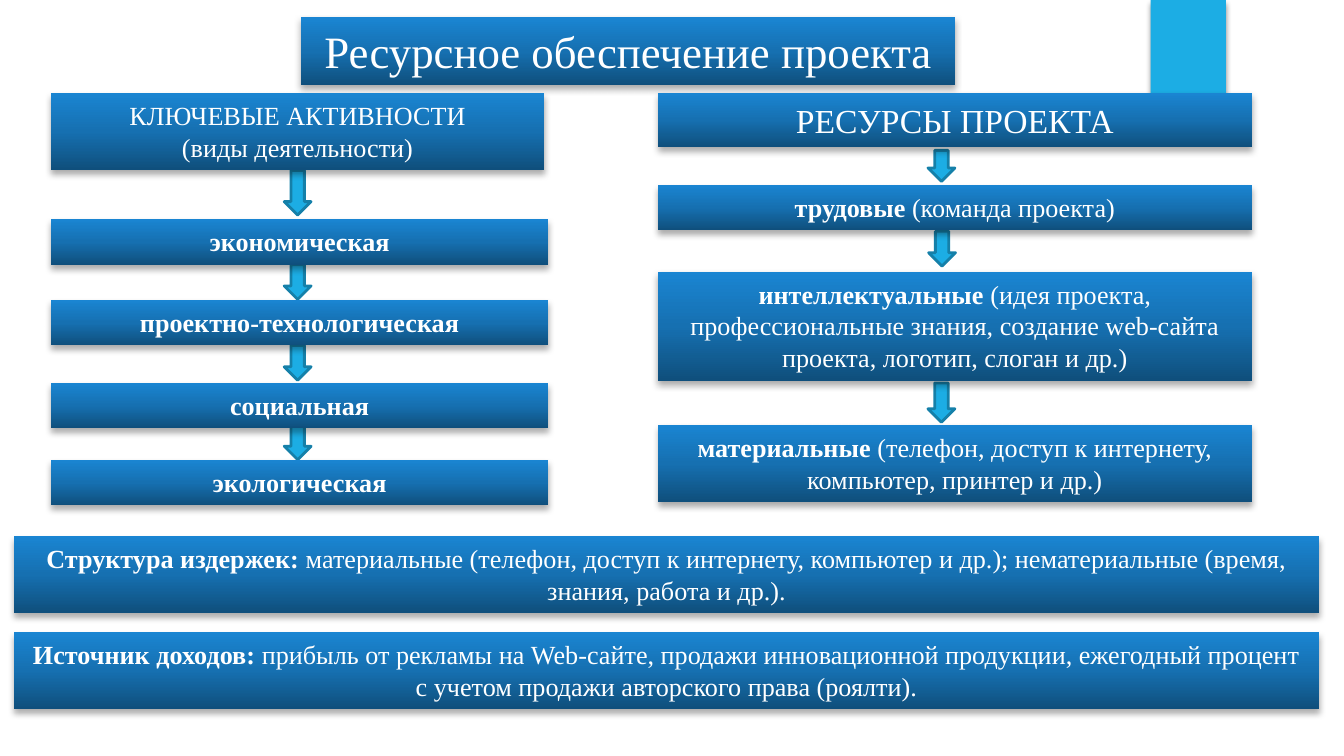
from copy import deepcopy

from lxml import etree
from pptx import Presentation
from pptx.dml.color import RGBColor
from pptx.enum.shapes import MSO_SHAPE
from pptx.enum.text import MSO_ANCHOR, PP_ALIGN
from pptx.oxml.ns import qn
from pptx.util import Inches, Pt

RECTANGLE, DOWN_ARROW = MSO_SHAPE.RECTANGLE, MSO_SHAPE.DOWN_ARROW
TOP, CENTER = MSO_ANCHOR.TOP, PP_ALIGN.CENTER

# Widescreen slide, 16 to 9
deck = Presentation()
deck.slide_width = Inches(10)
deck.slide_height = deck.slide_width * 9 // 16
page = deck.slides.add_slide(deck.slide_layouts[5])

# Grid of 100 columns by 100 rows
COLUMN, ROW = deck.slide_width / 100, deck.slide_height / 100
LEFT, LEFT_WIDTH = 3.8, 37
RIGHT, RIGHT_WIDTH = 48.95, 44.2
WIDE, WIDE_WIDTH = 1.05, 97.1
ONE_LINE, TWO_LINES, THREE_LINES = 6, 10.17, 14.4


def color(value):
    return RGBColor.from_string(value)


def place(shape, column, row, columns, rows, shadow):
    """Put a shape on the grid and give it a shadow of opacity, blur and distance."""
    shape.left, shape.top = int(column * COLUMN), int(row * ROW)
    shape.width, shape.height = int(columns * COLUMN), int(rows * ROW)
    shape.line.fill.background()
    shape.shadow.inherit = False
    if shadow:
        opacity, blur, distance = shadow
        effects = shape._element.spPr.find(qn("a:effectLst"))
        outer = etree.SubElement(effects, qn("a:outerShdw"), blurRad=str(Pt(blur)),
                                 dist=str(Pt(distance)), dir="5400000", rotWithShape="0")
        black = etree.SubElement(outer, qn("a:srgbClr"), val="000000")
        etree.SubElement(black, qn("a:alpha"), val=str(opacity * 1000))


# Flag at the top edge
flag = page.shapes.add_shape(RECTANGLE, 0, 0, 0, 0)
place(flag, 85.62, 0, 5.6, 16.7, (45, 3, 2))
flag.fill.solid()
flag.fill.fore_color.rgb = color("1CADE4")

# Arrows between the boxes: column, row, rows
arrows = [
    (21.15, 22.55, 5.9), (21.15, 35, 4.6), (21.15, 45.7, 4.6), (21.15, 56.2, 4.6),
    (69.05, 19.9, 4.1), (69.1, 30.6, 4.6), (69.05, 50.65, 5.2),
]
for column, row, rows in arrows:
    arrow = page.shapes.add_shape(DOWN_ARROW, 0, 0, 0, 0)
    place(arrow, column, row, 2, rows, None)
    arrow.fill.solid()
    arrow.fill.fore_color.rgb = color("1CADE4")
    arrow.line.color.rgb = color("1580A9")
    arrow.line.width = Pt(1.5)

# Boxes: column, row, columns, rows, size, paragraphs of (bold text, plain text)
title_box = (22.4, 2.3, 48.65, 8.97, 24, [("", "Ресурсное обеспечение проекта")])
boxes = [
    title_box,
    (LEFT, 12.3, 36.7, TWO_LINES, 14,
     [("", "КЛЮЧЕВЫЕ АКТИВНОСТИ"), ("", "(виды деятельности)")]),
    (LEFT, 29, LEFT_WIDTH, ONE_LINE, 14, [("экономическая", "")]),
    (LEFT, 39.7, LEFT_WIDTH, ONE_LINE, 14, [("проектно-технологическая", "")]),
    (LEFT, 50.65, LEFT_WIDTH, ONE_LINE, 14, [("социальная", "")]),
    (LEFT, 60.85, LEFT_WIDTH, ONE_LINE, 14, [("экологическая", "")]),
    (RIGHT, 12.3, RIGHT_WIDTH, 7.15, 18, [("", "РЕСУРСЫ ПРОЕКТА")]),
    (RIGHT, 24.45, RIGHT_WIDTH, ONE_LINE, 14, [("трудовые ", "(команда проекта)")]),
    (RIGHT, 35.95, RIGHT_WIDTH, THREE_LINES, 14,
     [("интеллектуальные ", "(идея проекта, профессиональные знания, создание "
       "web-сайта проекта, логотип, слоган и др.)")]),
    (RIGHT, 56.2, RIGHT_WIDTH, TWO_LINES, 14,
     [("материальные ", "(телефон, доступ к интернету, компьютер, принтер и др.)")]),
    (WIDE, 70.9, WIDE_WIDTH, TWO_LINES, 14,
     [("Структура издержек: ", "материальные (телефон, доступ к интернету, компьютер "
       "и др.); нематериальные (время, знания, работа и др.).")]),
    (WIDE, 83.6, WIDE_WIDTH, TWO_LINES, 14,
     [("Источник доходов: ", "прибыль от рекламы на Web-сайте, продажи инновационной "
       "продукции, ежегодный процент с учетом продажи авторского права (роялти).")]),
]
for entry in boxes:
    column, row, columns, rows, size, paragraphs = entry
    if entry is title_box:
        box = page.shapes.title
    else:
        box = page.shapes.add_shape(RECTANGLE, 0, 0, 0, 0)
    place(box, column, row, columns, rows, (32, 3.5, 2.2))

    # Gradient from dark at the bottom to light at the top
    box.fill.gradient()
    box.fill.gradient_angle = 90
    first_stop = box.fill.gradient_stops[0]._gs
    first_stop.addnext(deepcopy(first_stop))
    stops = [(0, "0F4F7C"), (0.5, "1670B1"), (1, "1A85D2")]
    for stop, (position, shade) in zip(box.fill.gradient_stops, stops):
        stop.position = position
        stop.color.rgb = color(shade)

    frame = box.text_frame
    frame.word_wrap = True
    frame.vertical_anchor = TOP
    for index, parts in enumerate(paragraphs):
        para = frame.add_paragraph() if index else frame.paragraphs[0]
        para.alignment = CENTER
        para.font.name = "Times New Roman"
        para.font.size = Pt(size)
        para.font.color.rgb = color("FFFFFF")
        for text, bold in zip(parts, (True, False)):
            if text:
                span = para.add_run()
                span.text = text
                span.font.bold = bold

deck.save("out.pptx")
